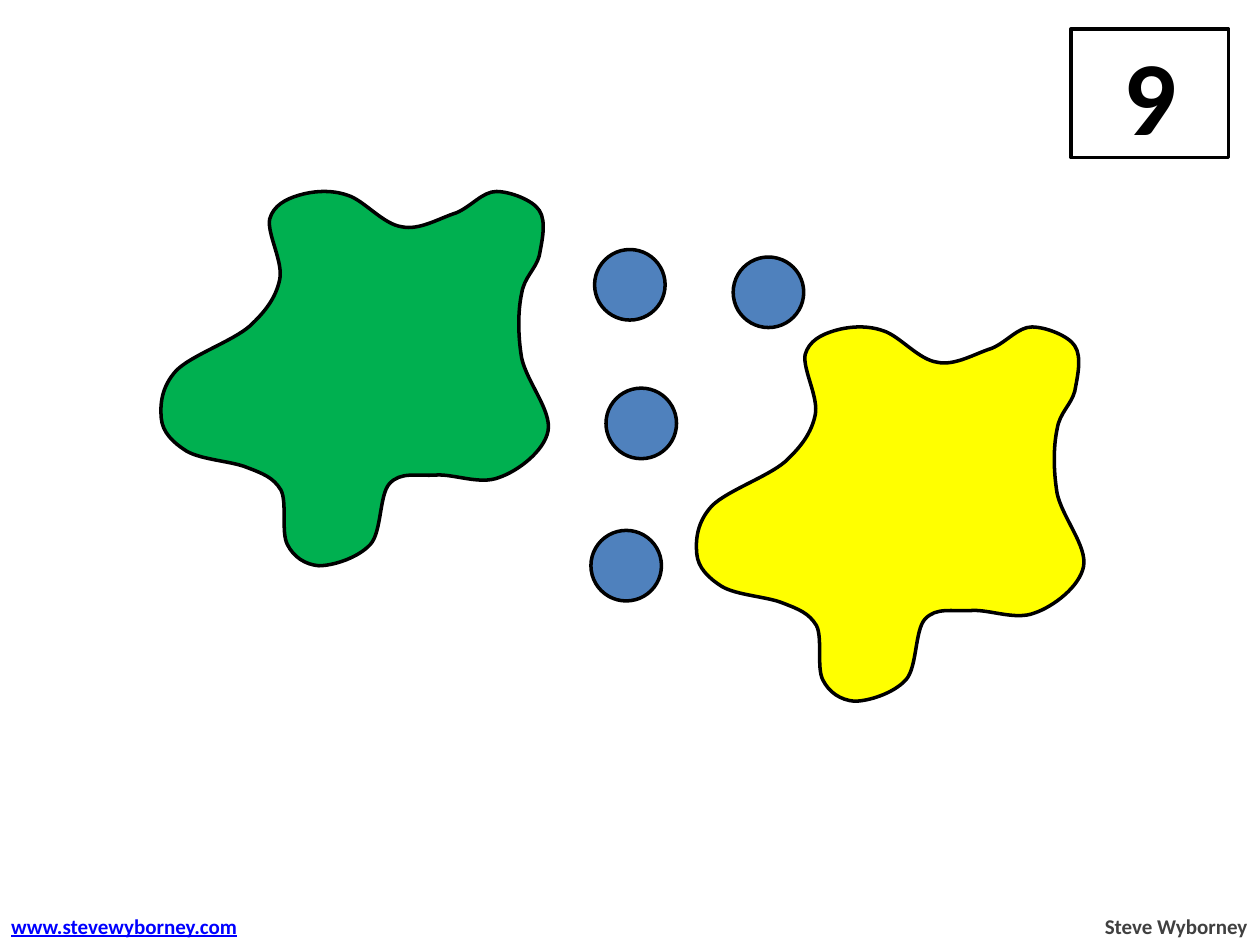
"""Build a number slide with two colour blobs, counters and a credit line."""
from dataclasses import dataclass

import pptx
import pptx.dml.color
import pptx.enum.shapes
import pptx.enum.text
import pptx.oxml.ns
import pptx.util

Pt = pptx.util.Pt
qn = pptx.oxml.ns.qn
ALIGN = pptx.enum.text.PP_ALIGN
SHAPES = pptx.enum.shapes.MSO_SHAPE


@dataclass
class Blob:
    dx: float
    dy: float
    fill: str


@dataclass
class Counter:
    left: float
    top: float


@dataclass
class Credit:
    text: str
    left: float
    width: float
    align: ALIGN
    color: str
    underline: bool


UNIT = Pt(0.72)
COUNTER_SIZE = 40.3
BLOB_START = (148, 358)
BLOB_CURVES = [
    (137, 351, 129, 343, 128, 332), (127, 321, 128, 307, 140, 294),
    (152, 282, 184, 271, 198, 259), (211, 247, 219, 236, 222, 222),
    (225, 208, 212, 186, 214, 174), (217, 163, 227, 158, 237, 155),
    (247, 152, 262, 150, 276, 155), (289, 159, 304, 178, 319, 180),
    (333, 183, 349, 173, 362, 169), (374, 164, 383, 152, 394, 152),
    (405, 152, 423, 159, 428, 167), (434, 176, 430, 192, 428, 203),
    (425, 214, 416, 220, 414, 233), (411, 247, 411, 266, 414, 284),
    (418, 303, 438, 326, 435, 342), (432, 358, 411, 374, 396, 379),
    (381, 385, 360, 376, 346, 377), (331, 378, 318, 374, 309, 384),
    (301, 393, 303, 422, 294, 432), (284, 443, 264, 449, 253, 449),
    (242, 448, 233, 442, 228, 432), (223, 422, 228, 399, 223, 389),
    (217, 379, 209, 376, 196, 371), (184, 366, 160, 365, 148, 358),
]
BLOBS = [Blob(0, 0, "00B050"), Blob(306, 77.4, "FFFF00")]
COUNTERS = [Counter(337.7, 303.1), Counter(346.3, 221.8),
            Counter(339.8, 142.6), Counter(419, 146.9)]
CREDITS = [
    Credit("Steve Wyborney", 623.5, 96.5, ALIGN.RIGHT, "404040", False),
    Credit("www.stevewyborney.com", -0.7, 143.6, ALIGN.LEFT, "0000FF", True),
]


def rgb(value: str) -> pptx.dml.color.RGBColor:
    return pptx.dml.color.RGBColor.from_string(value)


def paint(shape, fill: str) -> None:
    shape.shadow.inherit = False
    shape.fill.solid()
    shape.fill.fore_color.rgb = rgb(fill)
    shape.line.color.rgb = rgb("000000")
    shape.line.width = Pt(2)


def write(frame, text: str, size: float, color: str, align: ALIGN,
          underline: bool = False) -> None:
    paragraph = frame.paragraphs[0]
    paragraph.text = text
    paragraph.alignment = align
    font = paragraph.font
    font.name, font.size, font.bold = "Calibri", Pt(size), True
    font.underline = underline
    font.color.rgb = rgb(color)


def draw_number(slide, number: str) -> None:
    card = slide.shapes.add_shape(SHAPES.RECTANGLE, Pt(612), Pt(16.5), Pt(90), Pt(73.5))
    paint(card, "FFFFFF")
    card.text_frame.vertical_anchor = pptx.enum.text.MSO_ANCHOR.MIDDLE
    write(card.text_frame, number, 60, "000000", ALIGN.CENTER)


def draw_credit(slide, credit: Credit) -> None:
    box = slide.shapes.add_textbox(Pt(credit.left), Pt(518.2), Pt(credit.width), Pt(21.8))
    frame = box.text_frame
    frame.word_wrap = False
    frame.auto_size = pptx.enum.text.MSO_AUTO_SIZE.SHAPE_TO_FIT_TEXT
    write(frame, credit.text, 12, credit.color, credit.align, credit.underline)


def draw_counter(slide, counter: Counter) -> None:
    disc = slide.shapes.add_shape(SHAPES.OVAL, Pt(counter.left), Pt(counter.top),
                                  Pt(COUNTER_SIZE), Pt(COUNTER_SIZE))
    paint(disc, "4F81BD")


def draw_blob(slide, blob: Blob) -> None:
    builder = slide.shapes.build_freeform(*BLOB_START, scale=UNIT)
    builder.add_line_segments(
        [curve[i:i + 2] for curve in BLOB_CURVES for i in (0, 2, 4)], close=True)
    outline = builder.convert_to_shape(Pt(blob.dx), Pt(blob.dy))
    paint(outline, blob.fill)
    bend_lines(outline)


def bend_lines(outline) -> None:
    route = outline._element.find(".//" + qn("a:path"))
    lines = route.findall(qn("a:lnTo"))
    for first in range(0, len(BLOB_CURVES) * 3, 3):
        curve = route.makeelement(qn("a:cubicBezTo"))
        lines[first].addprevious(curve)
        for line in lines[first:first + 3]:
            curve.append(line[0])
            route.remove(line)


def main() -> None:
    deck = pptx.Presentation()
    deck.slide_width, deck.slide_height = Pt(720), Pt(540)
    slide = deck.slides.add_slide(deck.slide_layouts[6])
    draw_number(slide, "9")
    for credit in CREDITS:
        draw_credit(slide, credit)
    for counter in COUNTERS:
        draw_counter(slide, counter)
    for blob in BLOBS:
        draw_blob(slide, blob)
    deck.save("out.pptx")


if __name__ == "__main__":
    main()
